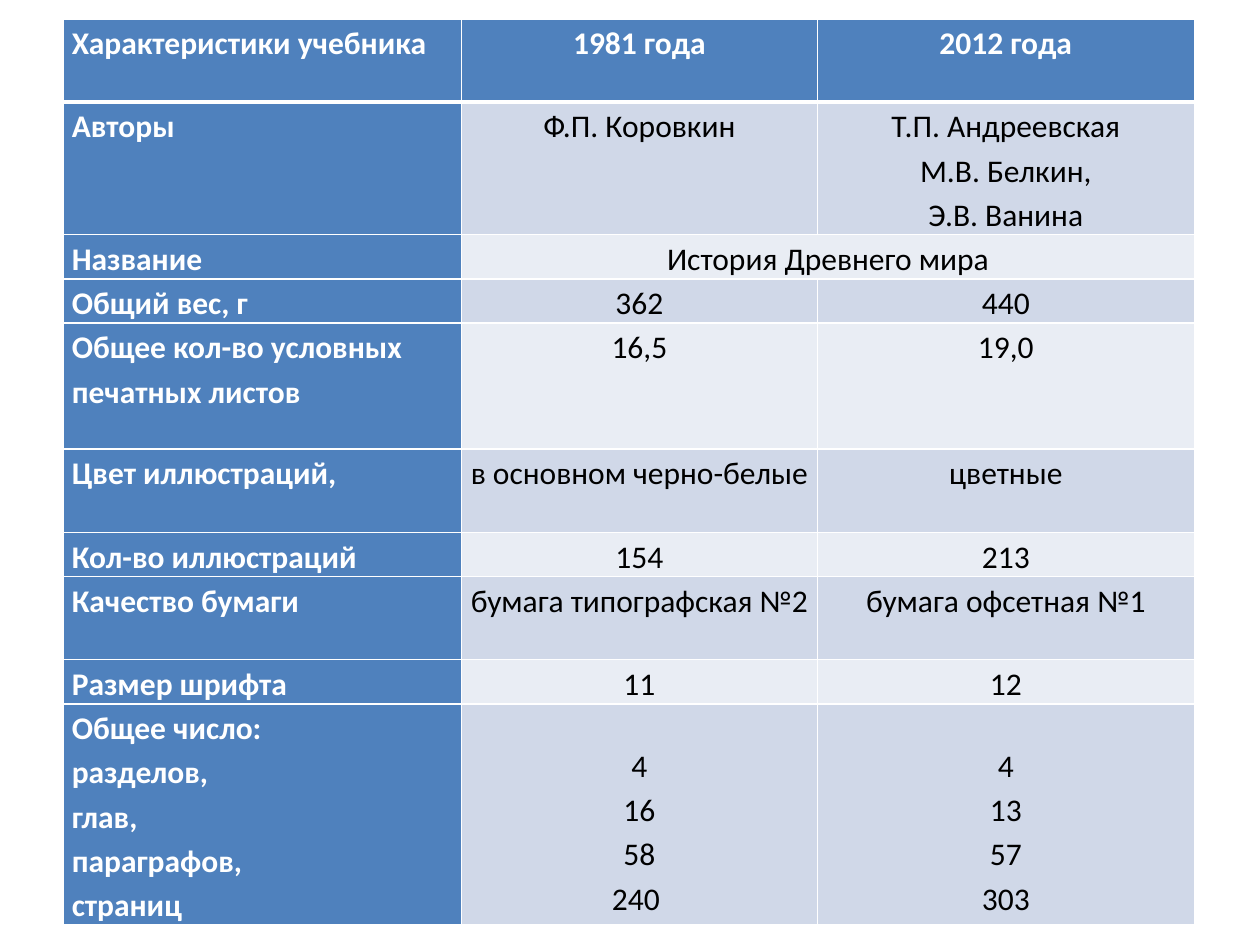
import pptx
import pptx.dml.color
import pptx.enum.text
import pptx.oxml
import pptx.oxml.ns
import pptx.util

Inches = pptx.util.Inches
Pt = pptx.util.Pt
ALIGN = pptx.enum.text.PP_ALIGN

BLUE, WHITE, BLACK = "4F81BD", "FFFFFF", "000000"
BANDS = ("E9EDF4", "D0D8E8")
COLUMN_WIDTHS = (3.16, 2.82, 2.99)
TITLE_ROW = 2
TOTALS_ROW = 9
ROWS = (
    (0.66, "Характеристики учебника", "1981 года", "2012 года"),
    (1, "Авторы", "Ф.П. Коровкин", "Т.П. Андреевская\nМ.В. Белкин,\nЭ.В. Ванина"),
    (0.32, "Название", "История Древнего мира", ""),
    (0.32, "Общий вес, г", "362", "440"),
    (1, "Общее кол-во условных печатных листов", "16,5", "19,0"),
    (0.66, "Цвет иллюстраций,", "в основном черно-белые", "цветные"),
    (0.32, "Кол-во иллюстраций", "154", "213"),
    (0.66, "Качество бумаги", "бумага типографская №2", "бумага офсетная №1"),
    (0.32, "Размер шрифта", "11", "12"),
    (1.33, "Общее число:\nразделов,\nглав, \vпараграфов,\vстраниц",
     "4\n16\n58\n240 ", "4\n13\n57\n303"),
)


def rgb(value):
    return pptx.dml.color.RGBColor.from_string(value)


def set_borders(cell, top, bottom):
    properties = cell._tc.get_or_add_tcPr()
    for side, points in (("L", 1), ("R", 1), ("T", top), ("B", bottom)):
        properties.append(pptx.oxml.parse_xml(
            f'<a:ln{side} {pptx.oxml.ns.nsdecls("a")} w="{Pt(points)}">'
            f'<a:solidFill><a:srgbClr val="{WHITE}"/></a:solidFill></a:ln{side}>'))


def fill_cell(cell, text, row, column):
    heading = row == 0 or column == 0
    set_borders(cell, 3 if row == 1 else 1, 3 if row == 0 else 1)
    cell.fill.solid()
    cell.fill.fore_color.rgb = rgb(BLUE if heading else BANDS[row % 2])
    cell.margin_left = cell.margin_right = Inches(0.07)
    cell.margin_top = Inches(0.3 if row == TOTALS_ROW and column else 0)
    cell.margin_bottom = 0
    cell.text_frame.text = text
    for para in cell.text_frame.paragraphs:
        para.alignment = ALIGN.CENTER if column else ALIGN.LEFT
        para.line_spacing = 1.15
        para.font.name = "Calibri"
        para.font.size = Pt(18)
        para.font.bold = heading
        para.font.color.rgb = rgb(WHITE if heading else BLACK)


def add_comparison(page, left, top, width, height):
    table = page.shapes.add_table(
        len(ROWS), len(COLUMN_WIDTHS), left, top, width, height).table
    table.first_row = table.horz_banding = False
    for column, size in zip(table.columns, COLUMN_WIDTHS):
        column.width = int(width * size / sum(COLUMN_WIDTHS))
    for row, (size, *texts) in enumerate(ROWS):
        table.rows[row].height = Inches(size)
        for column, text in enumerate(texts):
            fill_cell(table.cell(row, column), text, row, column)
    table.cell(TITLE_ROW, 1).merge(table.cell(TITLE_ROW, 2))


def main():
    deck = pptx.Presentation()
    deck.slide_width, deck.slide_height = Inches(10), Inches(7.5)
    page = deck.slides.add_slide(deck.slide_layouts[6])
    add_comparison(page, Inches(0.5), Inches(0.15), Inches(8.98), Inches(7.17))
    deck.save("out.pptx")


if __name__ == "__main__":
    main()
